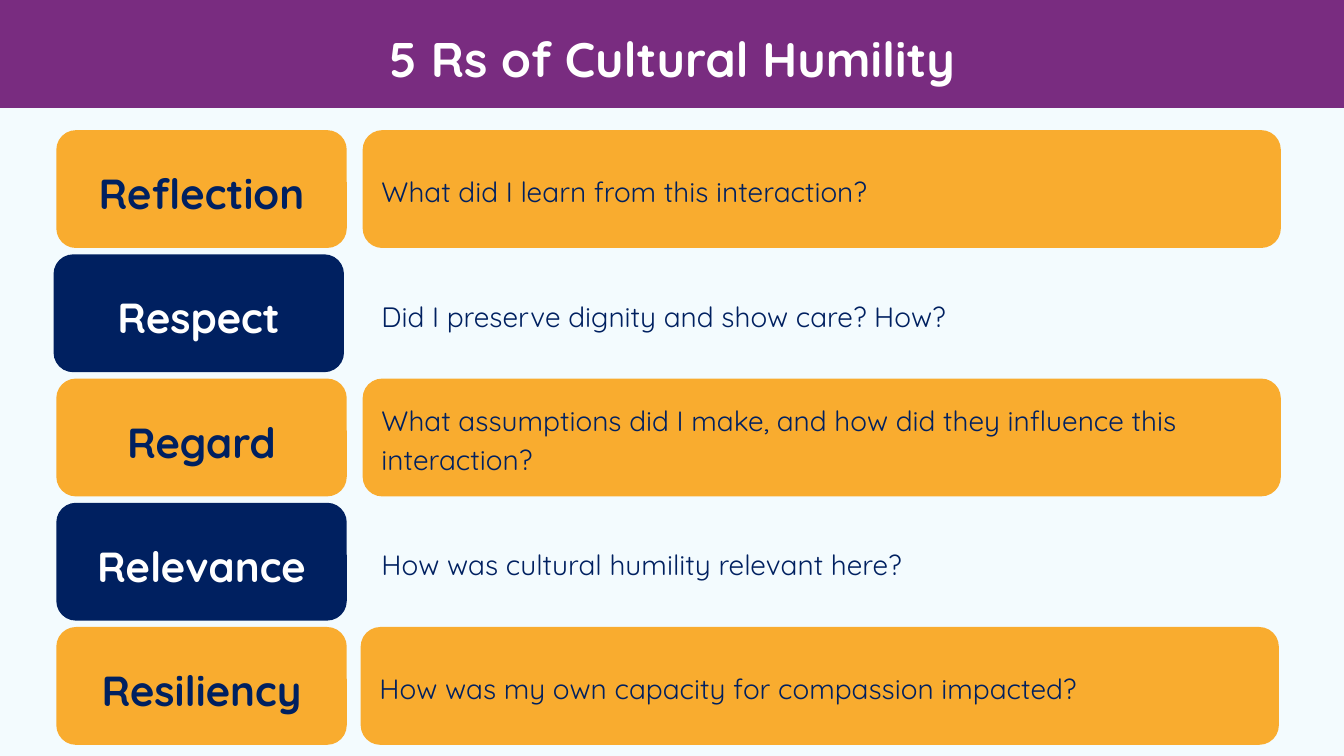
from dataclasses import dataclass

from pptx import Presentation
from pptx.dml.color import RGBColor
from pptx.enum.shapes import MSO_SHAPE
from pptx.enum.text import MSO_ANCHOR, MSO_AUTO_SIZE, PP_ALIGN
from pptx.util import Cm, Pt

TITLE = "5 Rs of Cultural Humility"
ROWS = [
    ("Reflection", "What did I learn from this interaction?"),
    ("Respect", "Did I preserve dignity and show care? How?"),
    ("Regard", "What assumptions did I make, and how did they influence this interaction?"),
    ("Relevance", "How was cultural humility relevant here?"),
    ("Resiliency", "How was my own capacity for compassion impacted?"),
]


@dataclass(frozen=True)
class Theme:
    font: str = "Quicksand"
    purple: RGBColor = RGBColor(0x79, 0x2C, 0x80)
    orange: RGBColor = RGBColor(0xF9, 0xAC, 0x2F)
    navy: RGBColor = RGBColor(0x00, 0x20, 0x60)
    pale: RGBColor = RGBColor(0xF3, 0xFB, 0xFE)
    white: RGBColor = RGBColor(0xFF, 0xFF, 0xFF)
    title_size: float = 34.7
    label_size: float = 30
    question_size: float = 20


THEME = Theme()
ROW_TOP, ROW_STEP, ROW_HEIGHT = 3.28, 3.13, 2.97
LABEL_LEFT, LABEL_WIDTH = 1.42, 7.32
QUESTION_LEFT, QUESTION_WIDTH = 9.14, 23.14
LABEL_SHIFTS = {"Respect": -0.07}
QUESTION_SHIFTS = {"Resiliency": -0.05}
INSET = Cm(0.33)


def write(shape, text, size, color, bold, align, anchor):
    frame = shape.text_frame
    frame.word_wrap = True
    frame.auto_size = MSO_AUTO_SIZE.NONE
    frame.vertical_anchor = anchor
    frame.margin_left = frame.margin_right = INSET
    frame.margin_top = frame.margin_bottom = INSET
    frame.text = text
    para = frame.paragraphs[0]
    para.alignment = align
    para.font.name = THEME.font
    para.font.size = Pt(size)
    para.font.bold = bold
    para.font.color.rgb = color
    return para


def add_block(page, kind, left, top, width, height, fill):
    shape = page.shapes.add_shape(kind, Cm(left), Cm(top), Cm(width), Cm(height))
    shape.shadow.inherit = False
    shape.fill.solid()
    shape.fill.fore_color.rgb = fill
    shape.line.fill.background()
    return shape


def add_card(page, left, top, width, fill, text, size, color, bold, align):
    card = add_block(page, MSO_SHAPE.ROUNDED_RECTANGLE, left, top, width, ROW_HEIGHT, fill)
    para = write(card, text, size, color, bold, align, MSO_ANCHOR.MIDDLE)
    para.line_spacing = 1.15


def add_heading(page):
    add_block(page, MSO_SHAPE.RECTANGLE, 0, -0.02, 33.87, 2.74, THEME.purple)
    title = page.shapes.title
    title.element.getparent().append(title.element)
    title.left, title.top = Cm(1.75), Cm(0.41)
    title.width, title.height = Cm(30.38), Cm(1.85)
    write(title, TITLE, THEME.title_size, THEME.white, True, PP_ALIGN.CENTER, MSO_ANCHOR.TOP)


def add_rows(page):
    for index, (label, question) in enumerate(ROWS):
        top = ROW_TOP + index * ROW_STEP
        if index % 2 == 0:
            label_fill, label_color, question_fill = THEME.orange, THEME.navy, THEME.orange
        else:
            label_fill, label_color, question_fill = THEME.navy, THEME.white, THEME.pale
        label_left = LABEL_LEFT + LABEL_SHIFTS.get(label, 0)
        question_left = QUESTION_LEFT + QUESTION_SHIFTS.get(label, 0)
        add_card(page, label_left, top, LABEL_WIDTH, label_fill,
                 label, THEME.label_size, label_color, True, PP_ALIGN.CENTER)
        add_card(page, question_left, top, QUESTION_WIDTH, question_fill,
                 question, THEME.question_size, THEME.navy, False, PP_ALIGN.LEFT)


def main():
    deck = Presentation()
    deck.slide_width, deck.slide_height = Cm(33.87), Cm(19.05)
    page = deck.slides.add_slide(deck.slide_layouts[5])
    page.background.fill.solid()
    page.background.fill.fore_color.rgb = THEME.pale
    add_heading(page)
    add_rows(page)
    deck.save("out.pptx")


if __name__ == "__main__":
    main()
